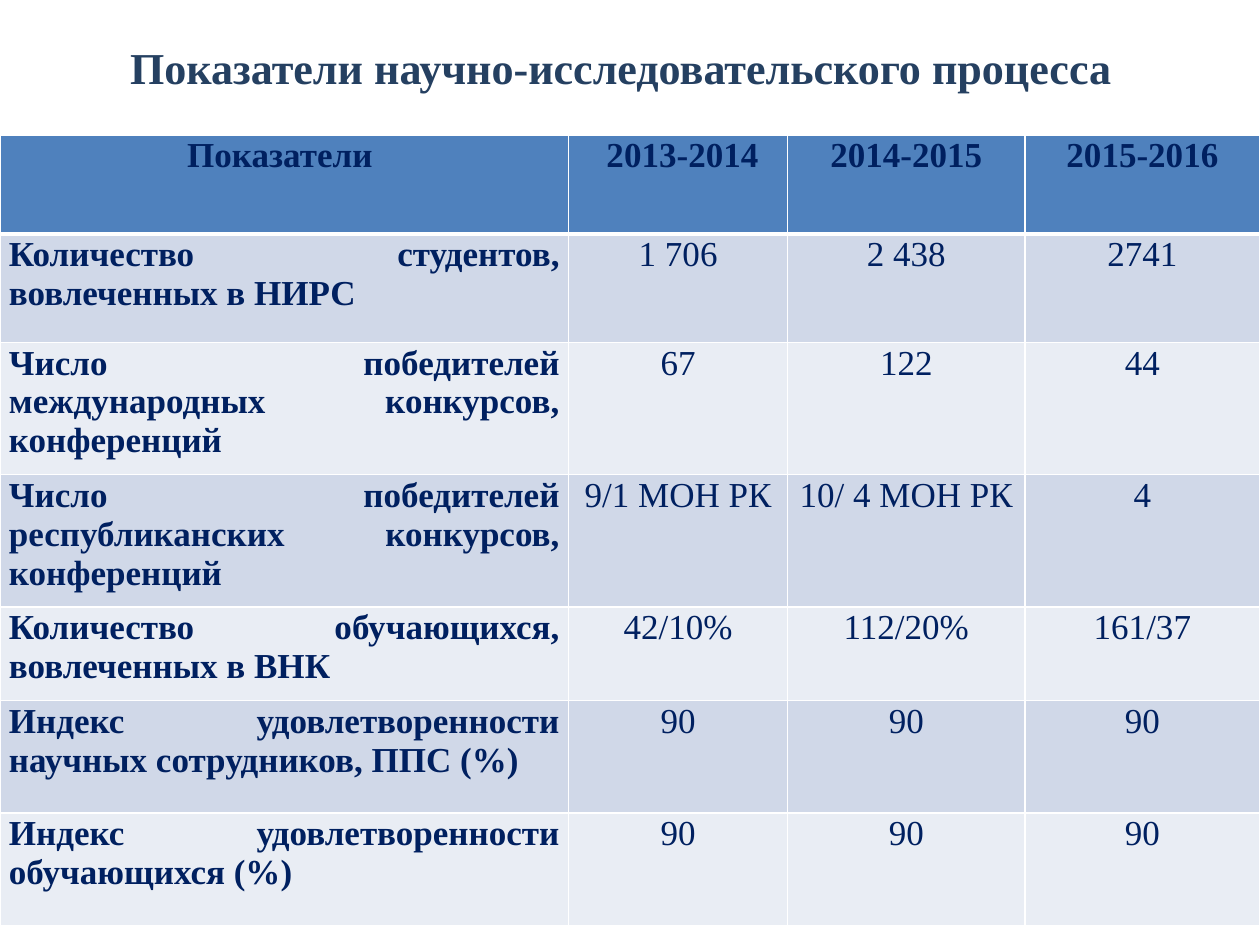
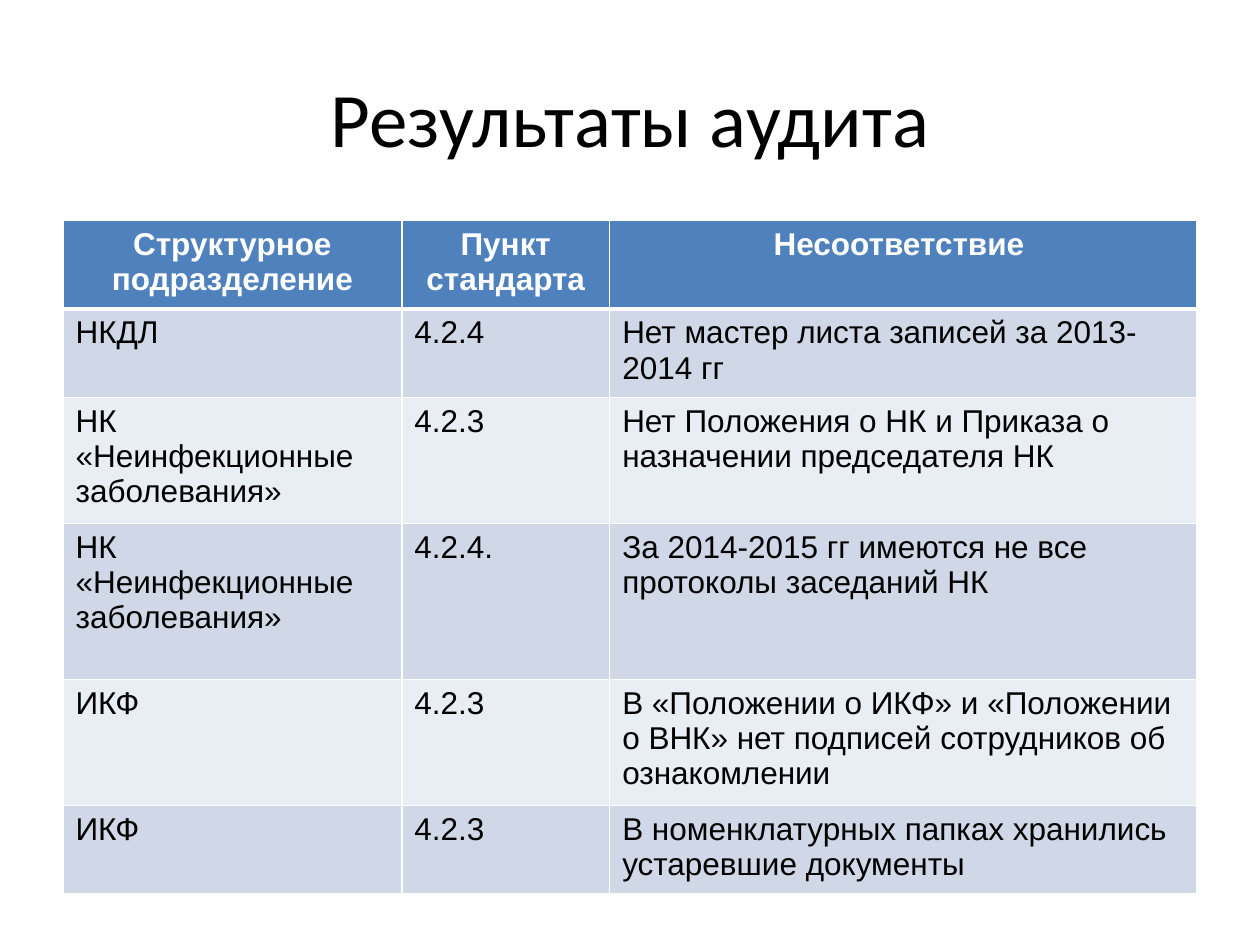
"""Build two slides with tables on research indicators and audit results."""
import pptx
import pptx.dml.color
import pptx.enum.text
import pptx.oxml
import pptx.oxml.ns
import pptx.util

Cm = pptx.util.Cm
Pt = pptx.util.Pt
RGB = pptx.dml.color.RGBColor
ALIGN = pptx.enum.text.PP_ALIGN
ANCHOR = pptx.enum.text.MSO_ANCHOR

WHITE = RGB(0xFF, 0xFF, 0xFF)
BLACK = RGB(0, 0, 0)
NAVY = RGB(0x00, 0x20, 0x60)
SLATE = RGB(0x25, 0x40, 0x61)
HEAD = RGB(0x4F, 0x81, 0xBD)
BANDS = [RGB(0xD0, 0xD8, 0xE8), RGB(0xE9, 0xED, 0xF4)]

SERIF = {"name": "Times New Roman", "size": Pt(20), "color": NAVY}
SANS = {"name": "Arial", "size": Pt(18), "color": BLACK}

GOALS = [
    ["Показатели ", " 2013-2014", "2014-2015", "2015-2016"],
    ["Количество студентов, вовлеченных в НИРС", "1 706", "2 438", "2741"],
    ["Число победителей международных конкурсов, конференций",
     "67", "122", "44"],
    ["Число победителей республиканских конкурсов, конференций",
     "9/1 МОН РК", "10/ 4 МОН РК", "4"],
    ["Количество обучающихся, вовлеченных в ВНК",
     "42/10%", "112/20%", "161/37"],
    ["Индекс удовлетворенности научных сотрудников, ППС (%)",
     "90", "90", "90"],
    ["Индекс удовлетворенности обучающихся (%)", "90", "90", "90"],
]

AUDIT = [
    ["Структурное подразделение", "Пункт стандарта", "Несоответствие "],
    ["НКДЛ", "4.2.4", "Нет мастер листа записей за 2013-2014 гг"],
    ["НК «Неинфекционные заболевания»", "4.2.3",
     "Нет Положения о НК и Приказа о назначении председателя НК"],
    ["НК «Неинфекционные заболевания»", "4.2.4.",
     "За 2014-2015 гг имеются не все протоколы заседаний НК"],
    ["ИКФ", "4.2.3",
     "В «Положении о ИКФ» и «Положении о ВНК» нет подписей сотрудников "
     "об ознакомлении"],
    ["ИКФ", "4.2.3",
     "В номенклатурных папках хранились устаревшие документы"],
]


def set_all(target, values):
    """Set each named value on the target."""
    for name, value in values.items():
        setattr(target, name, value)


def put_text(frame, text, style, align):
    """Write one aligned and styled paragraph into a text frame."""
    para = frame.paragraphs[0]
    para.alignment = align
    run = para.add_run()
    run.text = text
    set_all(run.font, {k: v for k, v in style.items() if k != "color"})
    run.font.color.rgb = style["color"]


def add_title(slide, text, box, style, inset=0.13):
    """Add a centred title whose bottom inset can lift the text."""
    frame = slide.shapes.add_textbox(*map(Cm, box)).text_frame
    set_all(frame, {"word_wrap": True, "vertical_anchor": ANCHOR.MIDDLE,
                    "margin_bottom": Cm(inset)})
    put_text(frame, text, style, ALIGN.CENTER)


def add_edge(cell, side, width):
    """Draw one white border of a cell."""
    xml = (f'<a:{side} {pptx.oxml.ns.nsdecls("a")} w="{Pt(width)}">'
           f'<a:solidFill><a:srgbClr val="{WHITE}"/></a:solidFill></a:{side}>')
    cell._tc.get_or_add_tcPr().append(pptx.oxml.parse_xml(xml))


def paint(cell, row):
    """Give a cell its borders and the fill of its row."""
    edges = {"lnL": 1, "lnR": 1, "lnT": 3 if row == 1 else 1,
             "lnB": 3 if row == 0 else 1}
    for side, width in edges.items():
        add_edge(cell, side, width)
    cell.fill.solid()
    cell.fill.fore_color.rgb = BANDS[(row - 1) % 2] if row else HEAD


def add_grid(slide, data, spot, widths, heights, look, pads):
    """Add a banded table, with look giving style and alignment by place."""
    size = sum(widths), sum(heights)
    grid = slide.shapes.add_table(len(data), len(widths),
                                  *map(Cm, (*spot, *size))).table
    for col, width in zip(grid.columns, widths):
        col.width = Cm(width)
    for r, (line, height) in enumerate(zip(data, heights)):
        grid.rows[r].height = Cm(height)
        for c, text in enumerate(line):
            cell = grid.cell(r, c)
            set_all(cell, pads)
            paint(cell, r)
            put_text(cell.text_frame, text, *look(r, c))


def goal_look(row, col):
    """Return style and alignment for a cell of the indicators table."""
    side = ALIGN.JUSTIFY if row and col == 0 else ALIGN.CENTER
    return {**SERIF, "bold": row == 0 or col == 0}, side


def audit_look(row, col):
    """Return style and alignment for a cell of the audit table."""
    if row == 0:
        return {**SANS, "bold": True, "color": WHITE}, ALIGN.CENTER
    return {**SANS, "bold": False}, ALIGN.LEFT


def main():
    """Build and save both slides."""
    deck = pptx.Presentation()
    set_all(deck, {"slide_width": Cm(25.4), "slide_height": Cm(19.05)})
    blank = deck.slide_layouts[6]

    slide = deck.slides.add_slide(blank)
    add_title(slide, "Показатели научно-исследовательского процесса ",
              (1.2, 0.58, 22.86, 2.14),
              {**SERIF, "size": Pt(25.2), "bold": True, "color": SLATE}, 0.74)
    add_grid(slide, GOALS, (0, 2.72), [11.46, 4.42, 4.78, 4.74],
             [2, 2.18, 2.67, 2.67, 1.88, 2.27, 2.27], goal_look,
             {"margin_left": Cm(0.18), "margin_right": Cm(0.18),
              "margin_top": Cm(0.03), "margin_bottom": Cm(0)})

    slide = deck.slides.add_slide(blank)
    add_title(slide, "Результаты аудита", (1.27, 0.76, 22.86, 3.18),
              {"name": "Calibri", "size": Pt(44), "color": BLACK})
    add_grid(slide, AUDIT, (1.27, 4.45), [6.83, 4.19, 11.84],
             [1.65, 1.67, 2.39, 3.15, 2.39, 1.67], audit_look, {})

    deck.save("out.pptx")


if __name__ == "__main__":
    main()
